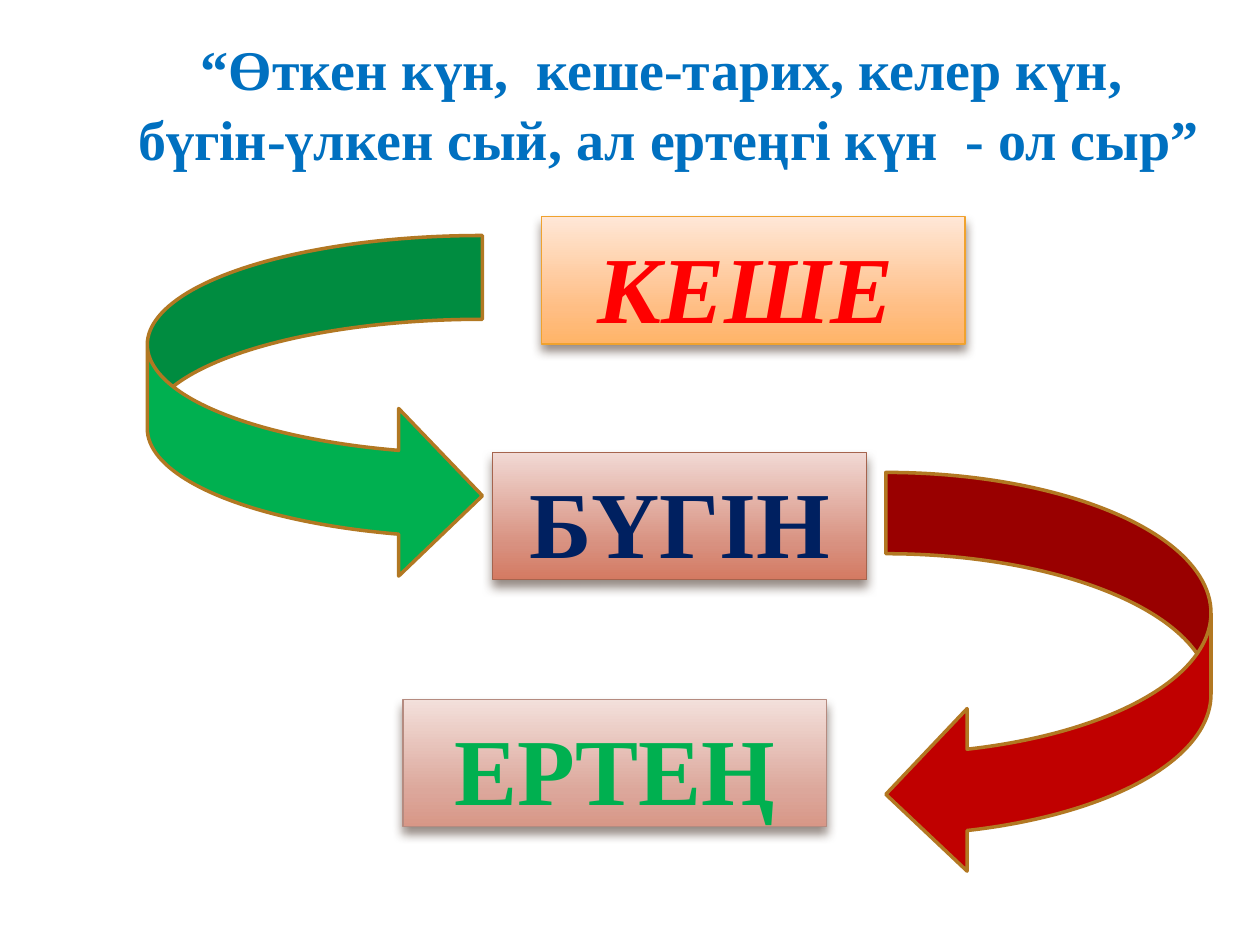
from lxml import etree
from pptx import Presentation
from pptx.dml.color import RGBColor
from pptx.enum.shapes import MSO_SHAPE
from pptx.enum.text import MSO_ANCHOR, MSO_AUTO_SIZE, PP_ALIGN
from pptx.oxml.ns import qn
from pptx.util import Pt

RECT, ARROW = MSO_SHAPE.RECTANGLE, MSO_SHAPE.CURVED_RIGHT_ARROW
CENTER, BOTTOM = PP_ALIGN.CENTER, MSO_ANCHOR.BOTTOM
SERIF = "Times New Roman"

TITLE = ["“Өткен күн,  кеше-тарих, келер күн, ",
         "бүгін-үлкен сый, ал ертеңгі күн  - ол сыр”"]
TITLE_BOX = (44.6, 16.6, 675.4, 85)
TITLE_FORMAT = {"name": SERIF, "size": Pt(32), "bold": True}
DAY_FORMAT = {"name": SERIF, "size": Pt(54), "bold": True}
SPACE_FORMAT = {"name": "Cabin", "size": Pt(40), "bold": False, "italic": False}

BOX_HEIGHT = 72.7
STOPS = (0, 72, 100)
# text, text colour, italic, left, top, width, gradient colours, line colour
DAYS = [
    ("КЕШЕ", "FF0000", True, 309.6, 123.8, 241.9,
     ("FFE7D7", "FFBE84", "FFB468"), "F0A22E"),
    ("БҮГІН", "002060", False, 281.5, 258.5, 213.8,
     ("F1D9D4", "D89180", "D47A62"), "A5644E"),
    ("ЕРТЕҢ", "00B050", False, 230.4, 399.6, 241.9,
     ("F3E0DB", "DCA79B", "D89787"), "B58B80"),
]
# box, fill, mirrored
ARROWS = [
    ((84.2, 134.6, 191.5, 196.6), "00B050", False),
    ((506.2, 270, 185.8, 230.4), "C00000", True),
]
ARROW_LINE = "B27822"


def rgb(value):
    return RGBColor.from_string(value)


def add_run(p, text, color, formats):
    r = p.add_run()
    r.text = text
    r.font.color.rgb = rgb(color)
    for key, value in formats.items():
        setattr(r.font, key, value)


def add_shape(slide, kind, box, line, width):
    sp = slide.shapes.add_shape(kind, *map(Pt, box))
    sp.shadow.inherit = False
    sp.line.color.rgb = rgb(line)
    sp.line.width = Pt(width)
    return sp


def add_color(parent, value):
    return etree.SubElement(parent, qn("a:srgbClr"), val=value)


def set_gradient(sp, colors):
    """Fill from top to bottom through the given colours."""
    sp.fill.gradient()
    sp.fill.gradient_angle = 270
    stops = sp._element.spPr.find(qn("a:gradFill")).find(qn("a:gsLst"))
    for old in list(stops):
        stops.remove(old)
    for position, color in zip(STOPS, colors):
        stop = etree.SubElement(stops, qn("a:gs"), pos=str(position * 1000))
        add_color(stop, color)


def set_shadow(sp):
    """Cast a soft brown shadow straight down."""
    effects = sp._element.spPr.find(qn("a:effectLst"))
    shadow = etree.SubElement(
        effects, qn("a:outerShdw"), blurRad=str(Pt(6)), dist=str(Pt(4)),
        dir="5400000", rotWithShape="0")
    etree.SubElement(add_color(shadow, "4E3B30"), qn("a:alpha"), val="60000")


def add_title(slide):
    title = slide.shapes.title
    title.left, title.top, title.width, title.height = map(Pt, TITLE_BOX)
    tf = title.text_frame
    tf.word_wrap = True
    tf.auto_size = MSO_AUTO_SIZE.NONE
    tf.vertical_anchor = BOTTOM
    for i, text in enumerate(TITLE):
        p = tf.add_paragraph() if i else tf.paragraphs[0]
        p.alignment = CENTER
        p.line_spacing = 1.04
        add_run(p, text, "0070C0", TITLE_FORMAT)


def add_day(slide, text, color, italic, left, top, width, colors, line):
    sp = add_shape(slide, RECT, (left, top, width, BOX_HEIGHT), line, 0.79)
    set_gradient(sp, colors)
    set_shadow(sp)
    tf = sp.text_frame
    tf.word_wrap = True
    tf.vertical_anchor = BOTTOM
    tf.margin_bottom = Pt(1)
    p = tf.paragraphs[0]
    p.alignment = CENTER
    add_run(p, text, color, {**DAY_FORMAT, "italic": italic})
    if italic:
        add_run(p, " ", "000000", SPACE_FORMAT)


def add_arrow(slide, box, fill, mirrored):
    sp = add_shape(slide, ARROW, box, ARROW_LINE, 2)
    sp.fill.solid()
    sp.fill.fore_color.rgb = rgb(fill)
    if mirrored:
        sp._element.spPr.find(qn("a:xfrm")).set("flipH", "1")


def main():
    prs = Presentation()
    prs.slide_width, prs.slide_height = Pt(720), Pt(540)
    slide = prs.slides.add_slide(prs.slide_layouts[5])
    add_title(slide)
    for day in DAYS:
        add_day(slide, *day)
    for arrow in ARROWS:
        add_arrow(slide, *arrow)
    prs.save("out.pptx")


if __name__ == "__main__":
    main()
